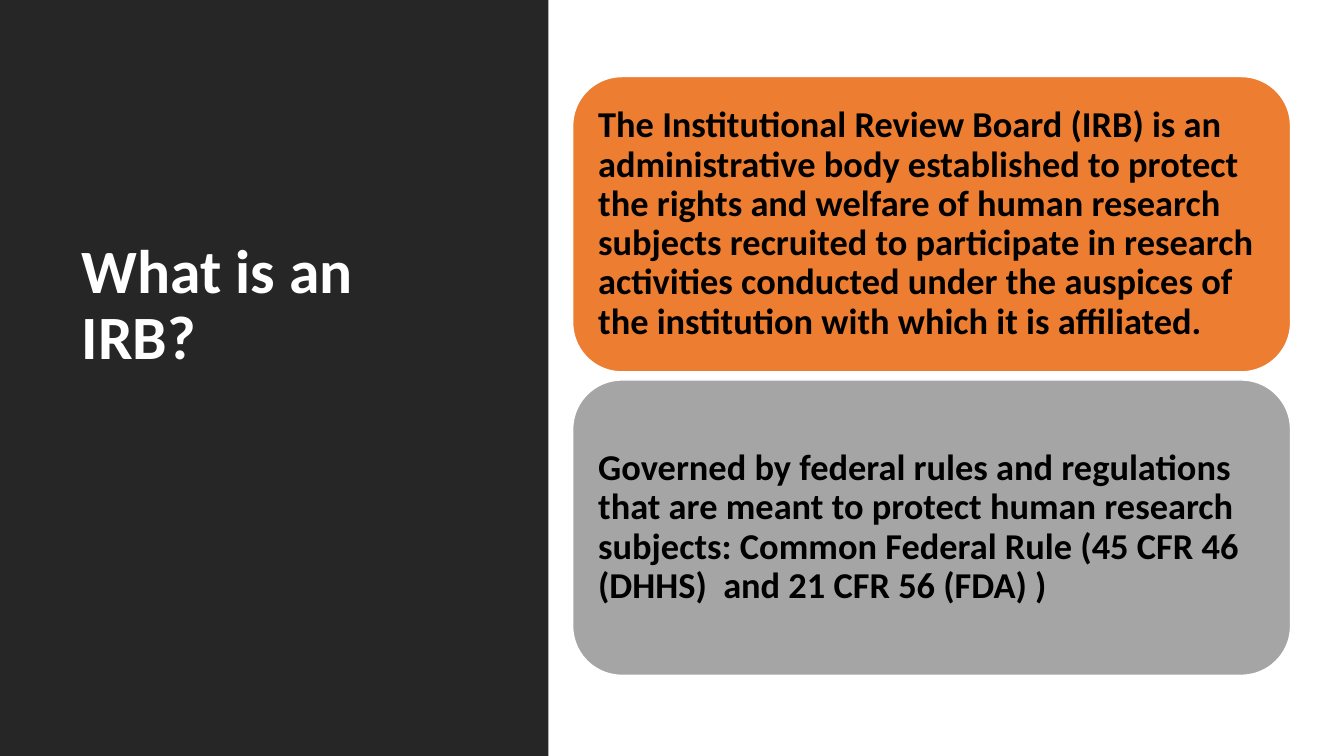
from dataclasses import dataclass

from pptx import Presentation
from pptx import util as u
from pptx.dml.color import RGBColor
from pptx.enum import shapes, text


@dataclass(frozen=True)
class Theme:
    font: str = "Calibri"
    white: str = "FFFFFF"
    black: str = "000000"
    dark: str = "262626"
    orange: str = "ED7D31"
    gray: str = "A5A5A5"
    head: int = 44
    body: int = 26


THEME = Theme()

CARDS = [
    (THEME.orange,
     "The Institutional Review Board (IRB) is an administrative body "
     "established to protect the rights and welfare of human research "
     "subjects recruited to participate in research activities conducted "
     "under the auspices of the institution with which it is affiliated."),
    (THEME.gray,
     "Governed by federal rules and regulations  that are meant to protect "
     "human research subjects: Common Federal Rule (45 CFR 46 (DHHS)  and "
     "21 CFR 56 (FDA) )"),
]


def write(shape, words, *, size, color, anchor, inset=None):
    """Put bold, left-aligned text into a shape."""
    frame = shape.text_frame
    frame.word_wrap = True
    frame.auto_size = text.MSO_AUTO_SIZE.NONE
    frame.vertical_anchor = anchor
    if inset is not None:
        frame.margin_left = frame.margin_right = u.Inches(inset)
        frame.margin_top = frame.margin_bottom = u.Inches(inset)
    para = frame.paragraphs[0]
    para.alignment = text.PP_ALIGN.LEFT
    para.line_spacing = 0.9
    run = para.add_run()
    run.text = words
    run.font.name = THEME.font
    run.font.size = u.Pt(size)
    run.font.bold = True
    run.font.color.rgb = RGBColor.from_string(color)


def block(slide, kind, box, fill, line=None):
    """Draw a filled shape, outlined only if a line colour is given."""
    shape = slide.shapes.add_shape(kind, *map(u.Inches, box))
    shape.shadow.inherit = False
    shape.fill.solid()
    shape.fill.fore_color.rgb = RGBColor.from_string(fill)
    if line:
        shape.line.color.rgb = RGBColor.from_string(line)
        shape.line.width = u.Pt(1)
    else:
        shape.line.fill.background()
    return shape


def set_title(slide, words, box):
    title = slide.shapes.title
    title.left, title.top, title.width, title.height = map(u.Inches, box)
    write(title, words, size=THEME.head, color=THEME.white,
          anchor=text.MSO_ANCHOR.BOTTOM)


def add_cards(slide, cards, left, top, width, height, gap):
    for row, (fill, words) in enumerate(cards):
        box = (left, top + row * (height + gap), width, height)
        card = block(slide, shapes.MSO_SHAPE.ROUNDED_RECTANGLE, box, fill,
                     line=THEME.white)
        write(card, words, size=THEME.body, color=THEME.black,
              anchor=text.MSO_ANCHOR.MIDDLE, inset=0.11)


def main():
    deck = Presentation()
    deck.slide_width, deck.slide_height = u.Inches(13.33), u.Inches(7.5)
    slide = deck.slides.add_slide(deck.slide_layouts[5])

    # Dark side panel, sent behind the title
    panel = block(slide, shapes.MSO_SHAPE.RECTANGLE, (0, 0, 5.44, 7.5),
                  THEME.dark)
    slide.shapes.title._element.addprevious(panel._element)

    # Title
    set_title(slide, "What is an IRB?", (0.71, 0.7, 4.05, 3.05))

    # Stacked cards
    add_cards(slide, CARDS, left=5.68, top=0.76, width=7.12, height=2.93,
              gap=0.08)

    deck.save("out.pptx")


if __name__ == "__main__":
    main()
